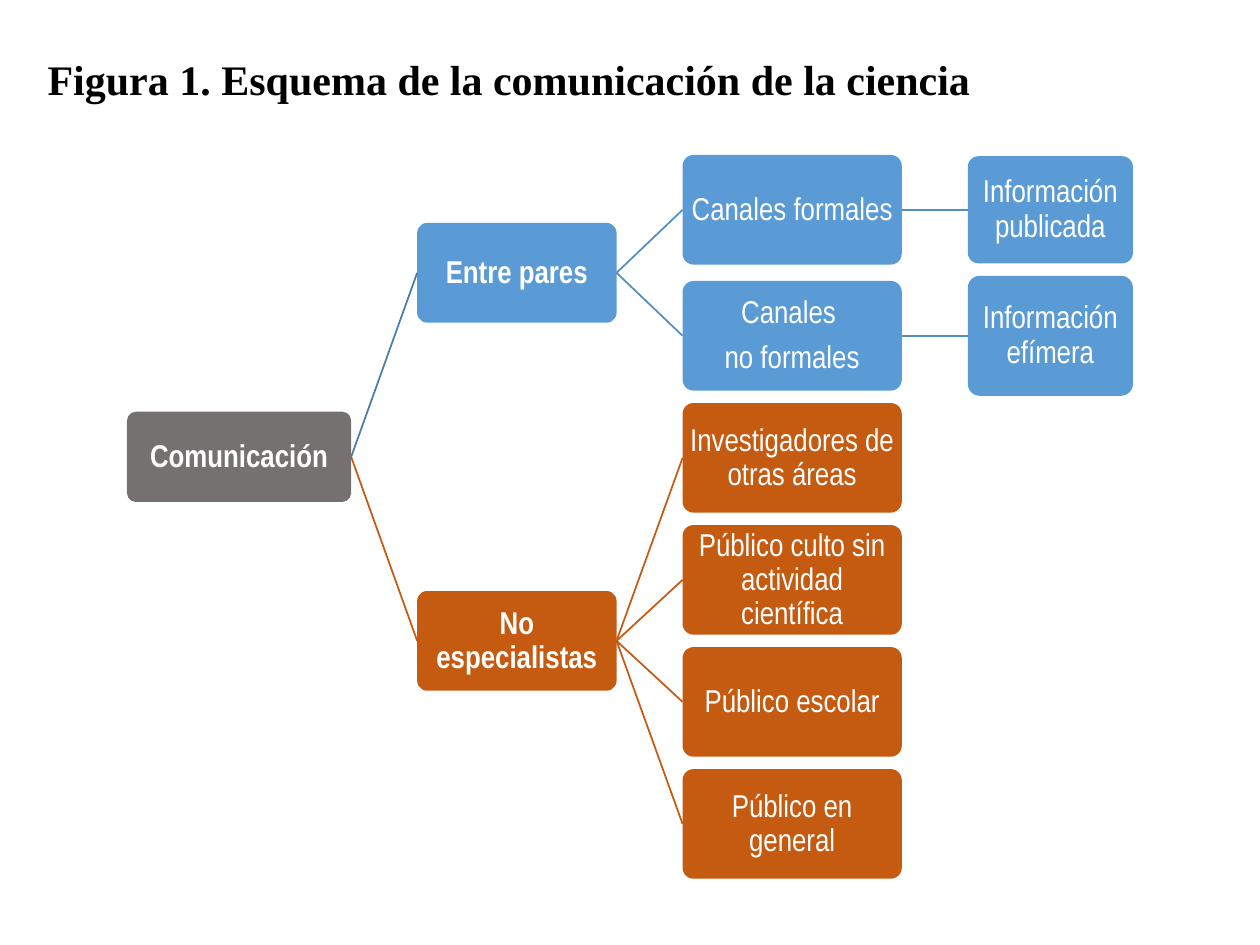
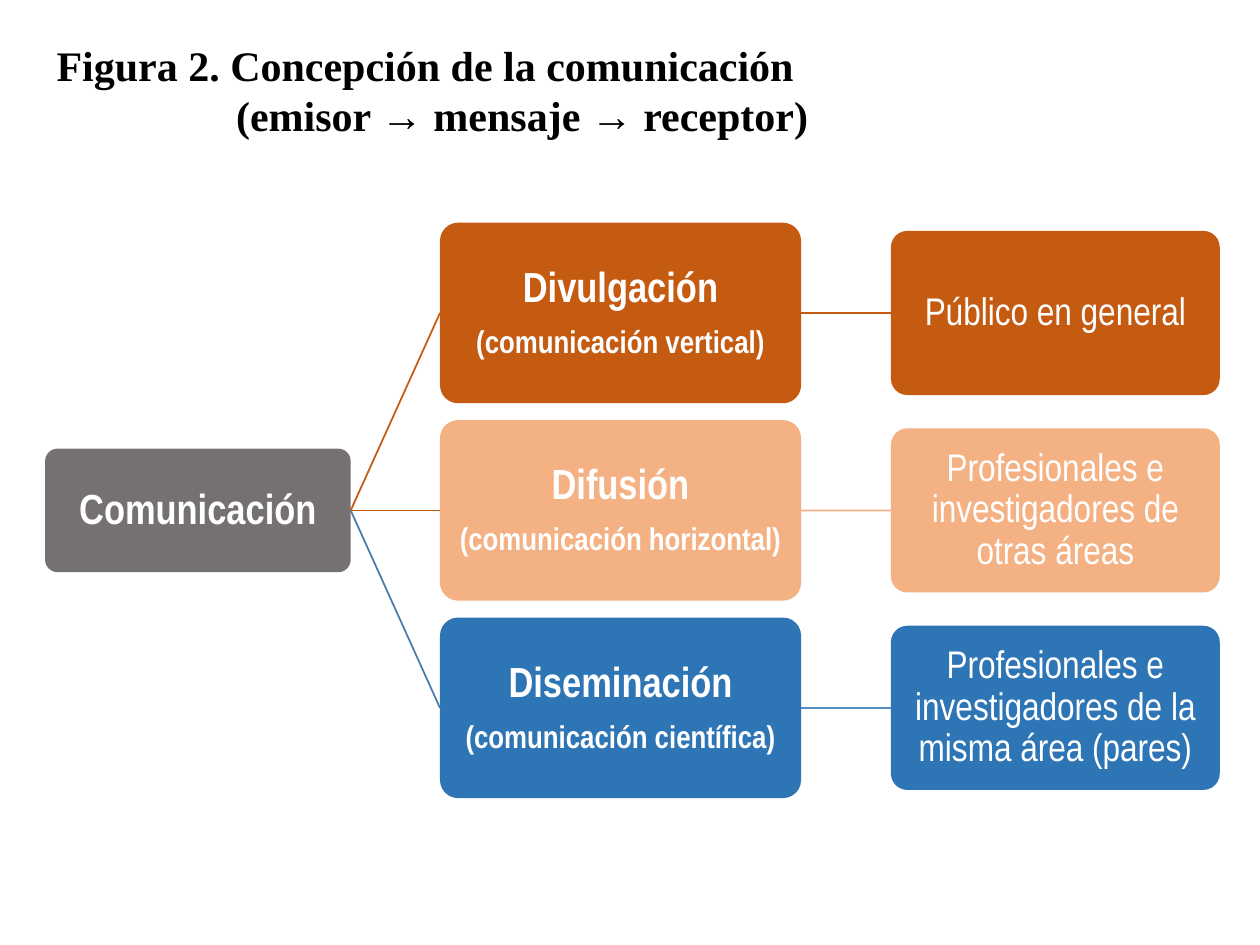
from dataclasses import dataclass

from lxml import etree
from pptx import Presentation
from pptx.dml.color import RGBColor
from pptx.enum import shapes, text
from pptx.oxml.ns import qn
from pptx.util import Cm, Pt

COLOURS = {
    "white": "FFFFFF", "black": "000000", "grey": "767171",
    "blue": "5B9BD5", "deep blue": "2E75B6",
    "orange": "C55A11", "peach": "F4B183",
    "blue line": "538DC1", "dark blue line": "497CAB",
}
TITLE_FONT, NODE_FONT = "Times New Roman", "Arial Narrow"


@dataclass
class Box:
    """A region, in centimetres."""
    left: float
    top: float
    width: float
    height: float

    def lengths(self):
        return Cm(self.left), Cm(self.top), Cm(self.width), Cm(self.height)


@dataclass
class Level:
    """A column of the tree; left is measured from the tree's edge."""
    left: float
    width: float
    height: float
    size: int
    bold: bool = False


@dataclass
class Node:
    """A box of the tree; a leaf has a centre measured from the tree's top."""
    lines: tuple
    fill: str
    link: str = ""
    children: tuple = ()
    centre: float = 0
    height: float = 0

    def middle(self):
        if not self.children:
            return self.centre
        return (self.children[0].middle() + self.children[-1].middle()) / 2


def colour(name):
    return RGBColor.from_string(COLOURS[name])


def write(frame, content, *, first=False, font=NODE_FONT, size=18, bold=False,
          ink="white", align=None, spacing=None, after=None, indent=0):
    para = frame.paragraphs[0] if first else frame.add_paragraph()
    if indent:
        properties = para._p.get_or_add_pPr()
        properties.set("marL", str(Cm(indent)))
        properties.set("indent", "0")
    para.alignment = align
    para.line_spacing = spacing
    if after:
        para.space_after = Pt(after)
    span = para.add_run()
    span.text = content
    span.font.name, span.font.size, span.font.bold = font, Pt(size), bold
    span.font.color.rgb = colour(ink)


def add_panel(page, box, kind, fill):
    panel = page.shapes.add_shape(kind, *box.lengths())
    panel.shadow.inherit = False
    panel.fill.solid()
    panel.fill.fore_color.rgb = colour(fill)
    panel.line.fill.background()
    panel.text_frame.word_wrap = True
    panel.text_frame.vertical_anchor = text.MSO_ANCHOR.MIDDLE
    return panel


def add_title(page, box, lines, **style):
    """Each line is a pair: wording and left indent."""
    title = add_panel(page, box, shapes.MSO_SHAPE.RECTANGLE, "white")
    for number, (content, indent) in enumerate(lines):
        write(title.text_frame, content, first=number == 0, font=TITLE_FONT,
              size=24, bold=True, ink="black", indent=indent, **style)


def add_link(page, parent, child, line):
    link = page.shapes.add_connector(shapes.MSO_CONNECTOR.STRAIGHT, 0, 0, 0, 0)
    link.begin_connect(parent, 3)  # right side
    link.end_connect(child, 1)     # left side
    link.line.color.rgb = colour(line)
    link.line.width = Pt(1)
    etree.SubElement(link._element.spPr, qn("a:effectLst"))


def add_tree(page, box, node, levels, inset, depth=0):
    """Draw a node, then its branches and the lines to them."""
    level = levels[depth]
    height = node.height or level.height
    place = Box(box.left + level.left, box.top + node.middle() - height / 2,
                level.width, height)
    panel = add_panel(page, place, shapes.MSO_SHAPE.ROUNDED_RECTANGLE, node.fill)
    panel.adjustments[0] = 0.1
    frame = panel.text_frame
    frame.margin_left = frame.margin_right = Cm(inset)
    frame.margin_top = frame.margin_bottom = Cm(inset)
    for number, content in enumerate(node.lines):
        size = 18 if number else level.size
        write(frame, content, first=number == 0, size=size, bold=level.bold,
              align=text.PP_ALIGN.CENTER, spacing=0.9, after=0.35 * size)
    for child in node.children:
        branch = add_tree(page, box, child, levels, inset, depth + 1)
        add_link(page, panel, branch, child.link)
    return panel


def build_scheme(page):
    # Peers: each channel leads to one kind of information
    channels = (
        (("Canales formales",), "Información publicada", 1.1, 2.16),
        (("Canales ", "no formales"), "Información efímera", 3.64, 2.42),
    )
    peers = tuple(
        Node(lines, "blue", "blue line",
             (Node((result,), "blue", "blue line", centre=centre, height=height),))
        for lines, result, centre, height in channels)

    # Audiences: evenly spaced
    audiences = ("Investigadores de otras áreas",
                 "Público culto sin actividad científica",
                 "Público escolar", "Público en general")
    public = tuple(
        Node((audience,), "orange", "orange", centre=6.1 + 2.46 * row)
        for row, audience in enumerate(audiences))

    root = Node(("Comunicación",), "grey", children=(
        Node(("Entre pares",), "blue", "dark blue line", peers),
        Node(("No especialistas",), "orange", "orange", public)))
    levels = (Level(0, 4.52, 1.82, 18, True), Level(5.85, 4.02, 2.01, 18, True),
              Level(11.2, 4.42, 2.21, 18), Level(16.95, 3.33, 2.16, 18))
    add_tree(page, Box(2.56, 3.13, 20.28, 14.59), root, levels, inset=0.03)
    add_title(page, Box(0.71, 0.53, 22.81, 2.13),
              [("Figura 1. Esquema de la comunicación de la ciencia", 0)], after=10)


def build_conception(page):
    # Branches: form, direction, receiver, fill, line to the form, line onward
    forms = (
        ("Divulgación", "(comunicación vertical)", "Público en general",
         "orange", "orange", "orange"),
        ("Difusión", "(comunicación horizontal)",
         "Profesionales e investigadores de otras áreas",
         "peach", "orange", "peach"),
        ("Diseminación", "(comunicación científica)",
         "Profesionales e investigadores de la misma área (pares)",
         "deep blue", "dark blue line", "blue line"),
    )
    branches = tuple(
        Node((form, direction), fill, link,
             (Node((receiver,), fill, onward, centre=1.82 + 3.98 * row),))
        for row, (form, direction, receiver, fill, link, onward)
        in enumerate(forms))

    root = Node(("Comunicación",), "grey", children=branches)
    levels = (Level(0, 6.16, 2.49, 24, True), Level(7.96, 7.28, 3.64, 24, True),
              Level(17.05, 6.63, 3.31, 22))
    add_tree(page, Box(0.91, 4.49, 23.68, 11.6), root, levels, inset=0.04)
    add_title(page, Box(0.89, 0.74, 23.39, 2.13),
              [("Figura 2. Concepción de la comunicación", 0),
               ("(emisor → mensaje → receptor)", 3.62)],
              align=text.PP_ALIGN.JUSTIFY)


def main():
    deck = Presentation()
    deck.slide_width, deck.slide_height = Cm(25.4), Cm(19.05)
    for build in (build_scheme, build_conception):
        build(deck.slides.add_slide(deck.slide_layouts[6]))
    deck.save("out.pptx")


if __name__ == "__main__":
    main()
